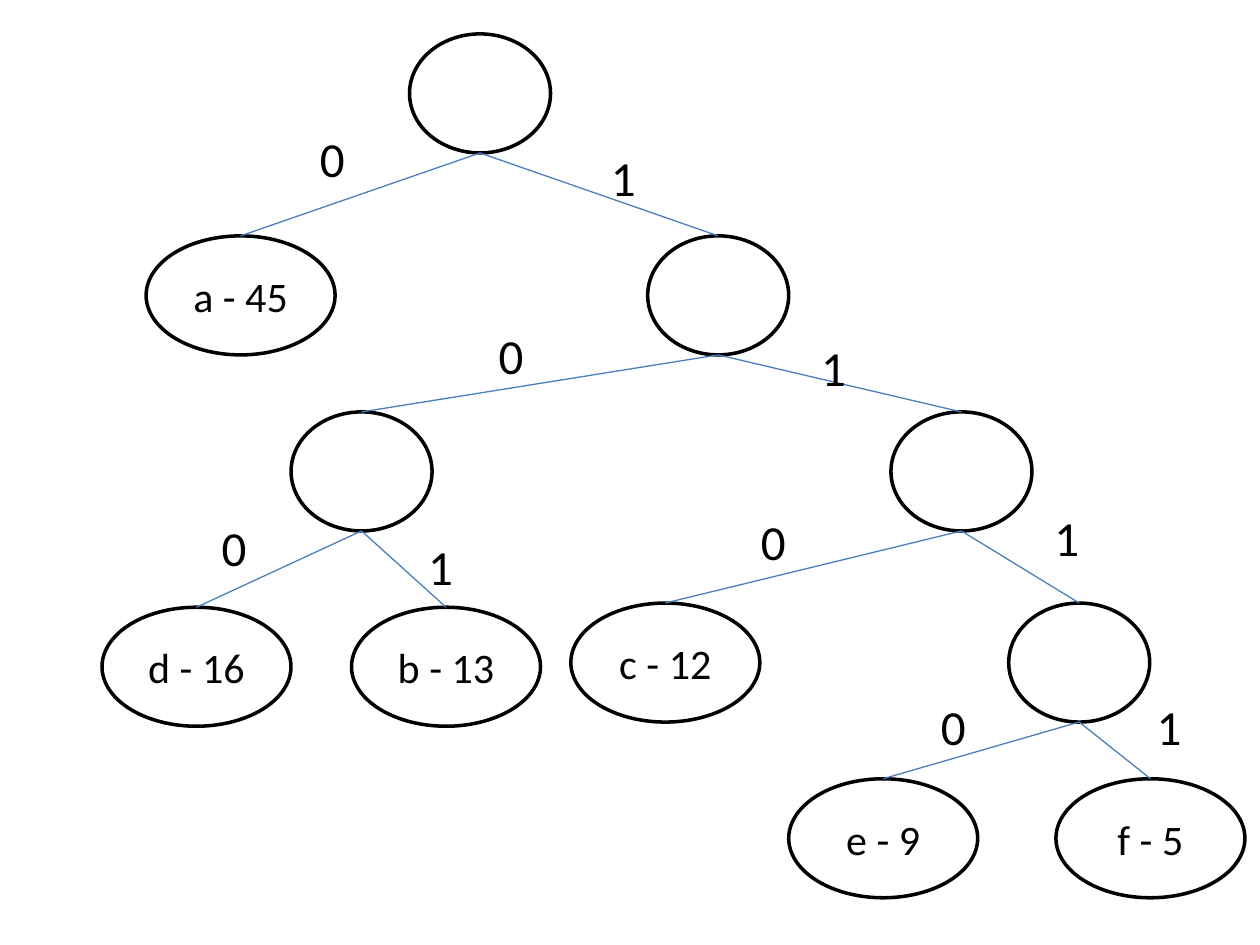
from pptx import Presentation
from pptx.dml.color import RGBColor
from pptx.enum import shapes, text
from pptx.oxml import ns, xmlchemy
from pptx.util import Pt

NODE_HEIGHT = 68
LEAF_WIDTH, INNER_WIDTH = 108, 80.6
BIT_WIDTH, BIT_HEIGHT = 36.7, 41.2

# name: (centre x, top, label); inner nodes have no label
NODES = {
    "root": (274.3, 19.4, ""),
    "a": (137.5, 134.8, "а - 45"),
    "bcdef": (410.4, 134.8, ""),
    "bd": (206.6, 235.4, ""),
    "cef": (549.4, 235.4, ""),
    "d": (112.3, 347, "d - 16"),
    "b": (254.9, 347, "b - 13"),
    "c": (380.2, 344.6, "c - 12"),
    "ef": (616.7, 344.6, ""),
    "e": (504.7, 445, "e - 9"),
    "f": (657.4, 445, "f - 5"),
}

# (parent, child, bit, bit left, bit top)
BRANCHES = [
    ("root", "a", "0", 175.7, 69.8),
    ("root", "bcdef", "1", 342, 80.6),
    ("bcdef", "bd", "0", 277.9, 182.2),
    ("bcdef", "cef", "1", 462.2, 189.4),
    ("bd", "d", "0", 119.5, 292.3),
    ("bd", "b", "1", 237.6, 303.1),
    ("cef", "c", "0", 427.7, 288.7),
    ("cef", "ef", "1", 595.4, 286.6),
    ("ef", "e", "0", 530.6, 394.6),
    ("ef", "f", "1", 653.8, 394.6),
]


def color(value):
    return RGBColor.from_string(value)


def write(shape, content, size=24, fill="000000", font="Calibri",
          align=text.PP_ALIGN.LEFT, anchor=text.MSO_ANCHOR.TOP):
    frame = shape.text_frame
    frame.word_wrap = True
    frame.vertical_anchor = anchor
    paragraph = frame.paragraphs[0]
    paragraph.alignment = align
    run = paragraph.add_run()
    run.text = content
    run.font.name = font
    run.font.size = Pt(size)
    run.font.color.rgb = color(fill)


def add_node(slide, center, top, label):
    width = LEAF_WIDTH if label else INNER_WIDTH
    shape = slide.shapes.add_shape(
        shapes.MSO_SHAPE.OVAL, Pt(center - width / 2), Pt(top), Pt(width), Pt(NODE_HEIGHT))
    shape.shadow.inherit = False
    shape.fill.solid()
    shape.fill.fore_color.rgb = color("FFFFFF")
    shape.line.color.rgb = color("000000")
    shape.line.width = Pt(2)
    if label:
        write(shape, label, align=text.PP_ALIGN.CENTER, anchor=text.MSO_ANCHOR.MIDDLE)


def add_edge(slide, start, end):
    line = slide.shapes.add_connector(
        shapes.MSO_CONNECTOR.STRAIGHT, *(Pt(value) for value in (*start, *end)))
    line.line.color.rgb = color("4B7EBC")
    line.line.width = Pt(0.75)
    line._element.spPr.append(xmlchemy.OxmlElement("a:effectLst"))


def add_bit(slide, left, top, bit):
    box = slide.shapes.add_textbox(Pt(left), Pt(top), Pt(BIT_WIDTH), Pt(BIT_HEIGHT))
    write(box, bit, size=28)
    box.text_frame.auto_size = text.MSO_AUTO_SIZE.SHAPE_TO_FIT_TEXT


def add_code_tree(slide, left, top):
    """Draw the prefix-code tree with its area's corner at left, top."""
    for center, node_top, label in NODES.values():
        add_node(slide, left + center, top + node_top, label)
    for parent, child, bit, bit_left, bit_top in BRANCHES:
        parent_x, parent_top, _ = NODES[parent]
        child_x, child_top, _ = NODES[child]
        add_edge(slide, (left + parent_x, top + parent_top + NODE_HEIGHT),
                 (left + child_x, top + child_top))
        add_bit(slide, left + bit_left, top + bit_top, bit)


def main():
    presentation = Presentation()
    presentation.slide_width, presentation.slide_height = Pt(720), Pt(540)
    slide = presentation.slides.add_slide(presentation.slide_layouts[6])
    add_code_tree(slide, 0, 0)
    presentation.save("out.pptx")


if __name__ == "__main__":
    main()
